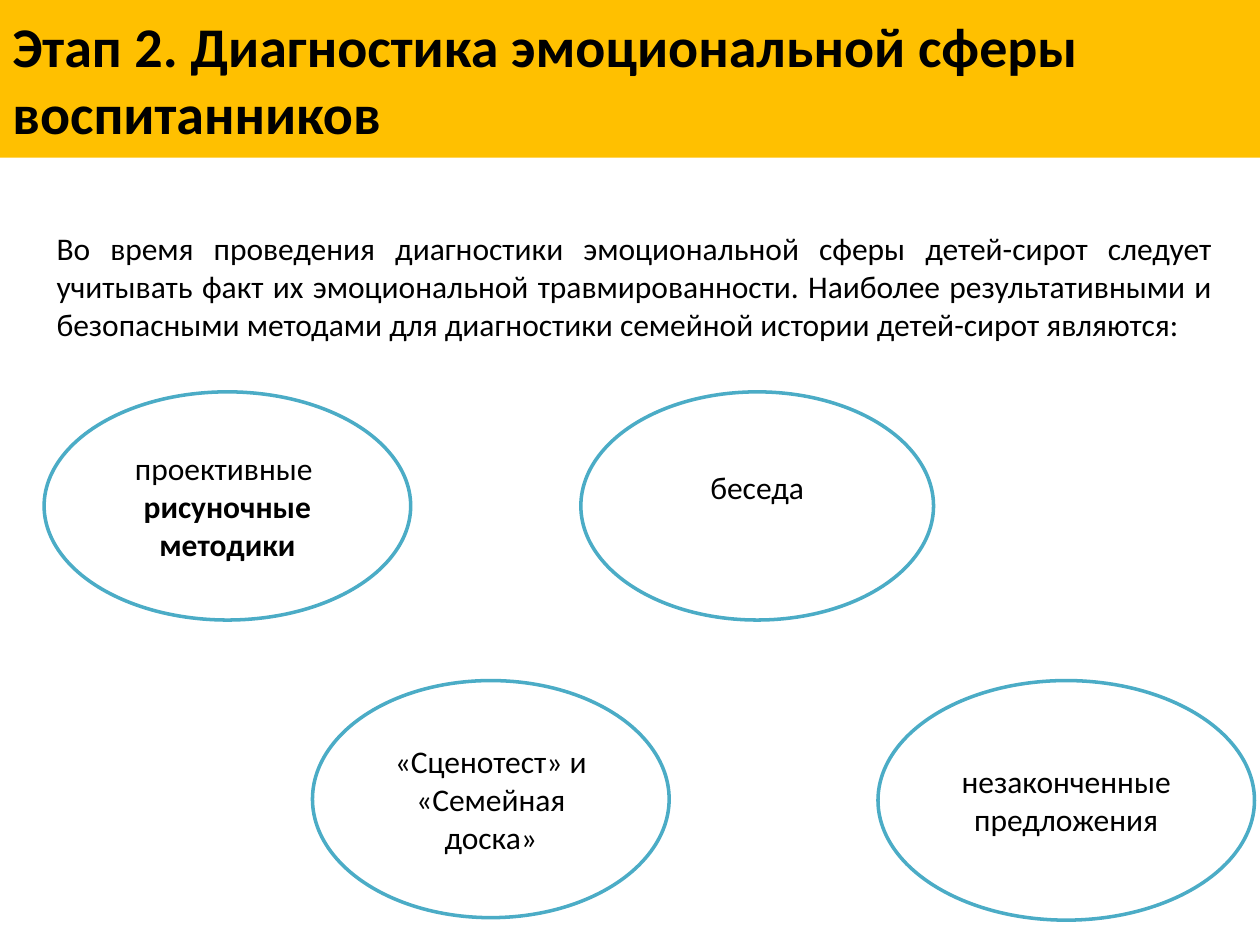
from dataclasses import dataclass

from pptx import Presentation
from pptx import util as u
from pptx.dml.color import RGBColor
from pptx.enum import shapes, text

FONT = "Calibri"
BLACK, WHITE, AMBER, TEAL = "000000", "FFFFFF", "FFC000", "4BACC6"
UPPER_ROW, LOWER_ROW = 7.9, 13.72


@dataclass
class Method:
    """An ellipse naming one diagnostic method; lengths in centimetres."""
    left: float
    top: float
    width: float
    height: float
    lines: tuple[str, ...]
    bold_lines: tuple[int, ...] = ()
    bottom_inset: float = 0.13


METHODS = (
    Method(0.89, UPPER_ROW, 7.39, 4.6,
           ("проективные ", "рисуночные методики"), bold_lines=(1,)),
    Method(6.3, LOWER_ROW, 7.19, 4.78, ("«Сценотест» и «Семейная доска»",)),
    Method(11.71, UPPER_ROW, 7.11, 4.6, ("беседа",), bottom_inset=0.9),
    Method(17.7, LOWER_ROW, 7.59, 4.83, ("незаконченные предложения",)),
)


def color(value: str) -> RGBColor:
    return RGBColor.from_string(value)


def write(text_frame, lines: tuple[str, ...], size: int, alignment,
          bold_lines: tuple[int, ...] = ()) -> None:
    text_frame.word_wrap = True
    text_frame.text = "\n".join(lines)
    for index, paragraph in enumerate(text_frame.paragraphs):
        paragraph.alignment = alignment
        for run in paragraph.runs:
            run.font.name = FONT
            run.font.size = u.Pt(size)
            run.font.bold = index in bold_lines
            run.font.color.rgb = color(BLACK)


def add_filled_shape(slide, kind, left: float, top: float,
                     width: float, height: float, fill: str):
    shape = slide.shapes.add_shape(
        kind, u.Cm(left), u.Cm(top), u.Cm(width), u.Cm(height))
    shape.shadow.inherit = False
    shape.fill.solid()
    shape.fill.fore_color.rgb = color(fill)
    shape.text_frame.vertical_anchor = text.MSO_ANCHOR.MIDDLE
    return shape


def add_title(slide, title: str) -> None:
    band = add_filled_shape(
        slide, shapes.MSO_SHAPE.RECTANGLE, 0, 0, 25.4, 3.18, AMBER)
    band.line.fill.background()
    write(band.text_frame, (title,), 32, text.PP_ALIGN.LEFT, bold_lines=(0,))


def add_introduction(slide, introduction: str) -> None:
    box = slide.shapes.add_textbox(u.Cm(0.89), u.Cm(4.5), u.Cm(23.8), u.Cm(2.57))
    write(box.text_frame, (introduction,), 18, text.PP_ALIGN.JUSTIFY)
    box.text_frame.auto_size = text.MSO_AUTO_SIZE.SHAPE_TO_FIT_TEXT


def add_method(slide, method: Method) -> None:
    ellipse = add_filled_shape(
        slide, shapes.MSO_SHAPE.OVAL, method.left, method.top,
        method.width, method.height, WHITE)
    ellipse.line.color.rgb = color(TEAL)
    ellipse.line.width = u.Pt(2)
    ellipse.text_frame.margin_bottom = u.Cm(method.bottom_inset)
    write(ellipse.text_frame, method.lines, 18, text.PP_ALIGN.CENTER,
          method.bold_lines)


def main() -> None:
    presentation = Presentation()
    presentation.slide_width = u.Cm(25.4)
    presentation.slide_height = u.Cm(19.05)
    slide = presentation.slides.add_slide(presentation.slide_layouts[6])
    add_title(slide, "Этап 2. Диагностика эмоциональной сферы воспитанников")
    add_introduction(
        slide,
        "Во время проведения диагностики эмоциональной сферы детей-сирот "
        "следует учитывать факт их эмоциональной травмированности. Наиболее "
        "результативными и безопасными методами для диагностики семейной "
        "истории детей-сирот являются:")
    for method in METHODS:
        add_method(slide, method)
    presentation.save("out.pptx")


if __name__ == "__main__":
    main()
